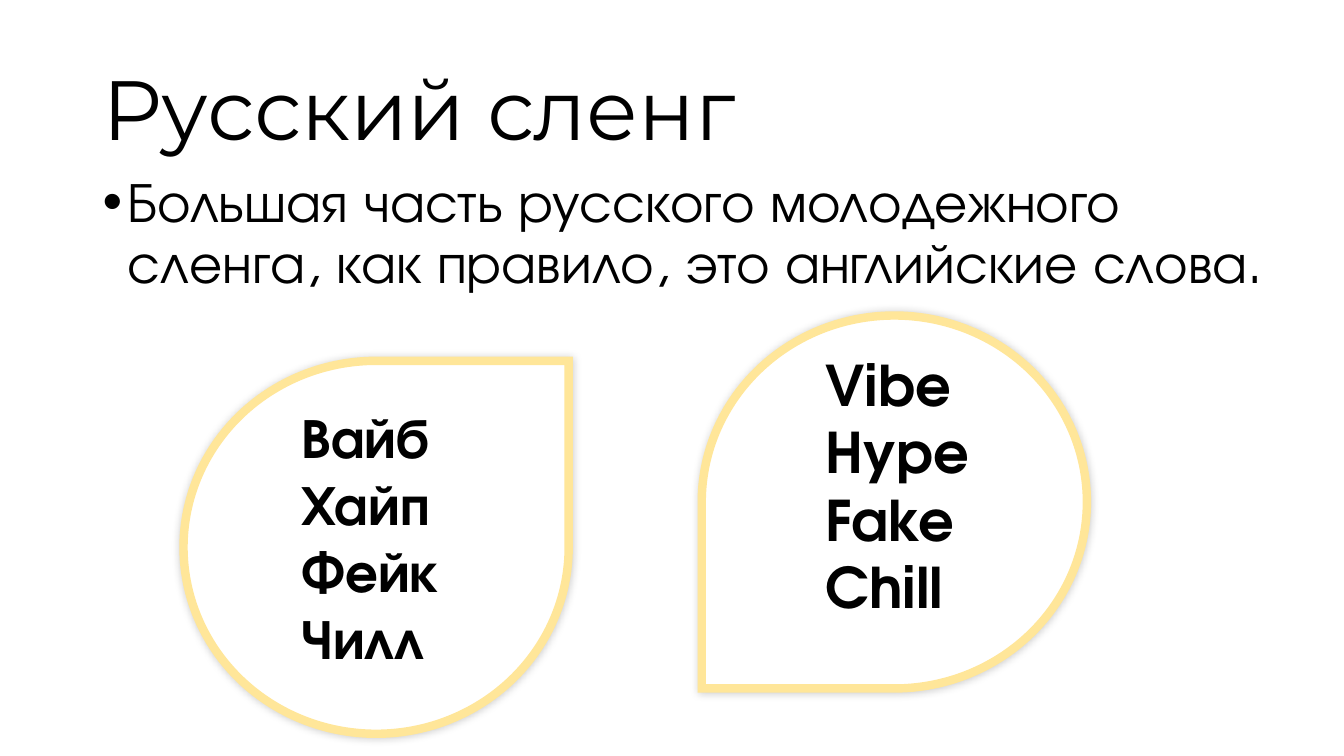
from dataclasses import dataclass

from lxml.etree import SubElement
from pptx import Presentation
from pptx.dml.color import RGBColor
from pptx.enum.shapes import MSO_SHAPE as Preset
from pptx.enum.text import MSO_ANCHOR as Anchor, MSO_AUTO_SIZE as AutoSize, PP_ALIGN as Align
from pptx.oxml.ns import qn
from pptx.slide import Slide
from pptx.util import Inches, Pt


@dataclass(frozen=True)
class Theme:
    ink: RGBColor = RGBColor(0, 0, 0)
    paper: RGBColor = RGBColor(255, 255, 255)
    outline: RGBColor = RGBColor(0xFF, 0xE6, 0x99)
    title_font: str = "Montserrat"
    text_font: str = "TeX Gyre Adventor"
    title_size: Pt = Pt(60)
    text_size: Pt = Pt(40)
    outline_width: Pt = Pt(6)
    shadow_blur: Pt = Pt(6)


@dataclass(frozen=True)
class Box:
    left: float
    top: float
    width: float
    height: float


@dataclass(frozen=True)
class WordDrop:
    drop: Box
    rotation: int
    text: Box
    words: tuple[str, ...]


THEME = Theme()
TITLE_BOX = Box(0.92, 0.4, 11.5, 1.45)
STATEMENT_BOX = Box(0.92, 1.68, 12.08, 4.48)
STATEMENT = "Большая часть русского молодежного сленга, как правило, это английские слова."
WORD_DROPS = (
    WordDrop(Box(1.82, 3.58, 3.82, 3.7), 0, Box(2.89, 3.94, 2.36, 2.79),
             ("Вайб", "Хайп", "Фейк", "Чилл")),
    WordDrop(Box(6.96, 3.13, 3.82, 3.7), 180, Box(8.09, 3.43, 2.27, 3.1),
             ("Vibe", "Hype", "Fake", "Chill")),
)
TITLE_FORMAT = {"name": THEME.title_font, "size": THEME.title_size, "bold": False}
STATEMENT_FORMAT = {"name": THEME.text_font, "size": THEME.text_size, "bold": False}
WORD_FORMAT = STATEMENT_FORMAT | {"bold": True}


def inches(box: Box) -> tuple[Inches, ...]:
    return tuple(Inches(value) for value in (box.left, box.top, box.width, box.height))


def set_all(target, values: dict) -> None:
    for name, value in values.items():
        setattr(target, name, value)


def format_font(font, values: dict) -> None:
    set_all(font, values)
    font.color.rgb = THEME.ink


def add_title(slide: Slide, text: str) -> None:
    title = slide.shapes.title
    set_all(title, dict(zip(("left", "top", "width", "height"), inches(TITLE_BOX))))
    frame = title.text_frame
    frame.text = text
    set_all(frame, {"vertical_anchor": Anchor.MIDDLE, "auto_size": AutoSize.NONE,
                    "word_wrap": True})
    paragraph = frame.paragraphs[0]
    set_all(paragraph, {"alignment": Align.LEFT, "line_spacing": 0.9})
    format_font(paragraph.runs[0].font, TITLE_FORMAT)


def add_text(slide: Slide, box: Box, lines: tuple[str, ...], font_format: dict):
    frame = slide.shapes.add_textbox(*inches(box)).text_frame
    frame.word_wrap = True
    frame.text = "\n".join(lines)
    for paragraph in frame.paragraphs:
        format_font(paragraph.runs[0].font, font_format)
    return frame


def add_statement(slide: Slide) -> None:
    paragraph = add_text(slide, STATEMENT_BOX, (STATEMENT,), STATEMENT_FORMAT).paragraphs[0]
    paragraph.line_spacing = 0.9
    properties = paragraph._p.get_or_add_pPr()
    properties.set("marL", str(Inches(0.25)))
    properties.set("indent", str(Inches(-0.25)))
    SubElement(properties, qn("a:buFont"), typeface="Arial")
    SubElement(properties, qn("a:buChar"), char="•")


def add_soft_shadow(shape) -> None:
    shape.shadow.inherit = False
    effects = shape._element.spPr.find(qn("a:effectLst"))
    shadow = SubElement(effects, qn("a:outerShdw"), blurRad=str(THEME.shadow_blur),
                        dist="0", algn="ctr", rotWithShape="0")
    color = SubElement(shadow, qn("a:srgbClr"), val=str(THEME.ink))
    SubElement(color, qn("a:alpha"), val="20000")


def add_drop(slide: Slide, box: Box, rotation: int) -> None:
    drop = slide.shapes.add_shape(Preset.TEAR, *inches(box))
    drop.rotation = rotation
    drop.fill.solid()
    drop.fill.fore_color.rgb = THEME.paper
    drop.line.color.rgb = THEME.outline
    drop.line.width = THEME.outline_width
    SubElement(drop.line._get_or_add_ln(), qn("a:miter"), lim="800000")
    add_soft_shadow(drop)


def main() -> None:
    presentation = Presentation()
    set_all(presentation, {"slide_width": Inches(13.33), "slide_height": Inches(7.5)})
    slide = presentation.slides.add_slide(presentation.slide_layouts.get_by_name("Title Only"))
    add_title(slide, "Русский сленг")
    add_statement(slide)
    for item in WORD_DROPS:
        add_drop(slide, item.drop, item.rotation)
    for item in WORD_DROPS:
        frame = add_text(slide, item.text, item.words, WORD_FORMAT)
        frame.auto_size = AutoSize.SHAPE_TO_FIT_TEXT
    presentation.save("out.pptx")


if __name__ == "__main__":
    main()
